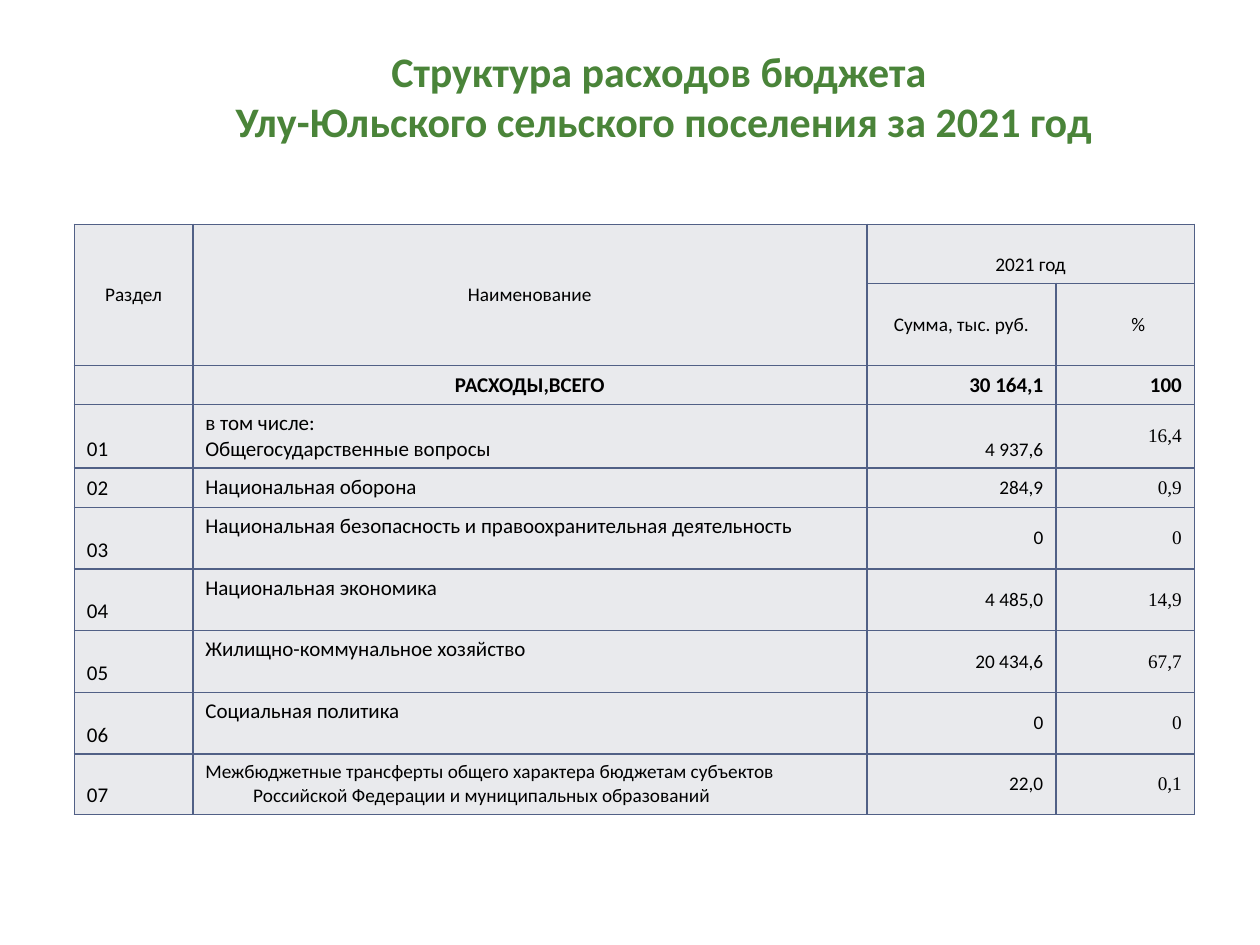
import pptx
import pptx.dml.color
import pptx.enum.text
import pptx.oxml.ns
import pptx.util
from lxml import etree

Inches, Pt = pptx.util.Inches, pptx.util.Pt
RGBColor = pptx.dml.color.RGBColor
ALIGN, ANCHOR = pptx.enum.text.PP_ALIGN, pptx.enum.text.MSO_ANCHOR
qn = pptx.oxml.ns.qn

GREEN = RGBColor(0x4A, 0x84, 0x39)
BLACK = RGBColor(0, 0, 0)
CELL_GREY = RGBColor(0xE9, 0xEA, 0xED)
BORDER_BLUE = RGBColor(0x51, 0x60, 0x86)

COLUMN_WIDTHS = [0.94, 5.35, 1.5, 1.1]
ROW_HEIGHTS = [0.47, 0.65, 0.31, 0.5, 0.31] + [0.49] * 4 + [0.47]
SECTIONS = [
    ("01", "в том числе:\nОбщегосударственные вопросы", "4 937,6", "16,4"),
    ("02", "Национальная оборона", "284,9", "0,9"),
    ("03", "Национальная безопасность и правоохранительная деятельность", "0", "0"),
    ("04", "Национальная экономика", "4 485,0", "14,9"),
    ("05", "Жилищно-коммунальное хозяйство", "20 434,6", "67,7"),
    ("06", "Социальная политика", "0", "0"),
    ("07", "Межбюджетные трансферты общего характера бюджетам субъектов "
           "Российской Федерации и муниципальных образований", "22,0", "0,1"),
]


class BudgetSlide:
    """Holds the slide and its style and adds each kind of element."""

    def __init__(self, presentation):
        self.slide = presentation.slides.add_slide(presentation.slide_layouts[5])
        self.font = "Calibri"
        self.hanging = 0.38

    def format_runs(self, paragraph, size, color=BLACK, bold=False, font=None):
        for run in paragraph.runs:
            run.font.name = font or self.font
            run.font.size = Pt(size)
            run.font.bold = bold
            run.font.color.rgb = color

    def title(self, text, left, top, width, height):
        heading = self.slide.shapes.title
        heading.left, heading.top = Inches(left), Inches(top)
        heading.width, heading.height = Inches(width), Inches(height)
        frame = heading.text_frame
        frame.text = text
        frame.vertical_anchor = ANCHOR.TOP
        frame.margin_top = Inches(0.08)
        frame.paragraphs[0].alignment = ALIGN.CENTER
        self.format_runs(frame.paragraphs[0], 24, GREEN, bold=True)

    def table(self, left, top):
        frame = self.slide.shapes.add_table(
            len(ROW_HEIGHTS), len(COLUMN_WIDTHS), Inches(left), Inches(top),
            Inches(sum(COLUMN_WIDTHS)), Inches(sum(ROW_HEIGHTS)))
        table = frame.table
        table.first_row = table.horz_banding = False
        for column, width in zip(table.columns, COLUMN_WIDTHS):
            column.width = Inches(width)
        for row, height in zip(table.rows, ROW_HEIGHTS):
            row.height = Inches(height)
        for cell in table.iter_cells():
            self.borders(cell)
            cell.fill.solid()
            cell.fill.fore_color.rgb = CELL_GREY
        return table

    def borders(self, cell):
        properties = cell._tc.get_or_add_tcPr()
        for side in ("lnL", "lnR", "lnT", "lnB"):
            line = etree.SubElement(properties, qn("a:" + side), w=str(Pt(1)))
            fill = etree.SubElement(line, qn("a:solidFill"))
            etree.SubElement(fill, qn("a:srgbClr"), val=str(BORDER_BLUE))

    def cell(self, cell, text, size=11, align=ALIGN.LEFT, anchor=ANCHOR.MIDDLE,
             bold=False, font=None, margin=None):
        cell.text_frame.text = text
        cell.vertical_anchor = anchor
        for paragraph in cell.text_frame.paragraphs:
            paragraph.alignment = align
            properties = paragraph._p.get_or_add_pPr()
            properties.set("marL", str(Inches(margin or self.hanging)))
            properties.set("indent", str(Inches(-self.hanging)))
            self.format_runs(paragraph, size, bold=bold, font=font)
            if not text:
                etree.SubElement(paragraph._p, qn("a:endParaRPr"), sz=str(size * 100))


def main():
    presentation = pptx.Presentation()
    presentation.slide_width, presentation.slide_height = Inches(10), Inches(7.5)
    budget = BudgetSlide(presentation)
    budget.title("Структура расходов бюджета\v Улу-Юльского сельского поселения за 2021 год",
                 0.98, 0.28, 8.5, 1.25)

    table = budget.table(0.59, 1.78)
    for column in (0, 1):
        table.cell(0, column).merge(table.cell(1, column))
    table.cell(0, 2).merge(table.cell(0, 3))
    budget.cell(table.cell(0, 0), "Раздел", align=ALIGN.CENTER)
    budget.cell(table.cell(0, 1), "Наименование", align=ALIGN.CENTER)
    budget.cell(table.cell(0, 2), "2021 год", align=ALIGN.CENTER, anchor=ANCHOR.BOTTOM)
    budget.cell(table.cell(1, 2), "Сумма, тыс. руб.", align=ALIGN.CENTER)
    budget.cell(table.cell(1, 3), "%", margin=0.88)

    totals = [("", ALIGN.LEFT), ("РАСХОДЫ,ВСЕГО", ALIGN.CENTER),
              ("30 164,1", ALIGN.RIGHT), ("100", ALIGN.RIGHT)]
    for column, (text, align) in enumerate(totals):
        budget.cell(table.cell(2, column), text, 12, align, ANCHOR.BOTTOM, bold=True)

    for row, (code, name, amount, share) in enumerate(SECTIONS, start=3):
        name_anchor = ANCHOR.TOP if "03" <= code <= "06" else ANCHOR.MIDDLE
        amount_anchor = ANCHOR.BOTTOM if code == "01" else ANCHOR.MIDDLE
        budget.cell(table.cell(row, 0), code, 12, anchor=ANCHOR.BOTTOM)
        budget.cell(table.cell(row, 1), name, 11 if code == "07" else 12, anchor=name_anchor)
        budget.cell(table.cell(row, 2), amount, align=ALIGN.RIGHT, anchor=amount_anchor)
        budget.cell(table.cell(row, 3), share, align=ALIGN.RIGHT, font="Times New Roman")

    presentation.save("out.pptx")


if __name__ == "__main__":
    main()
